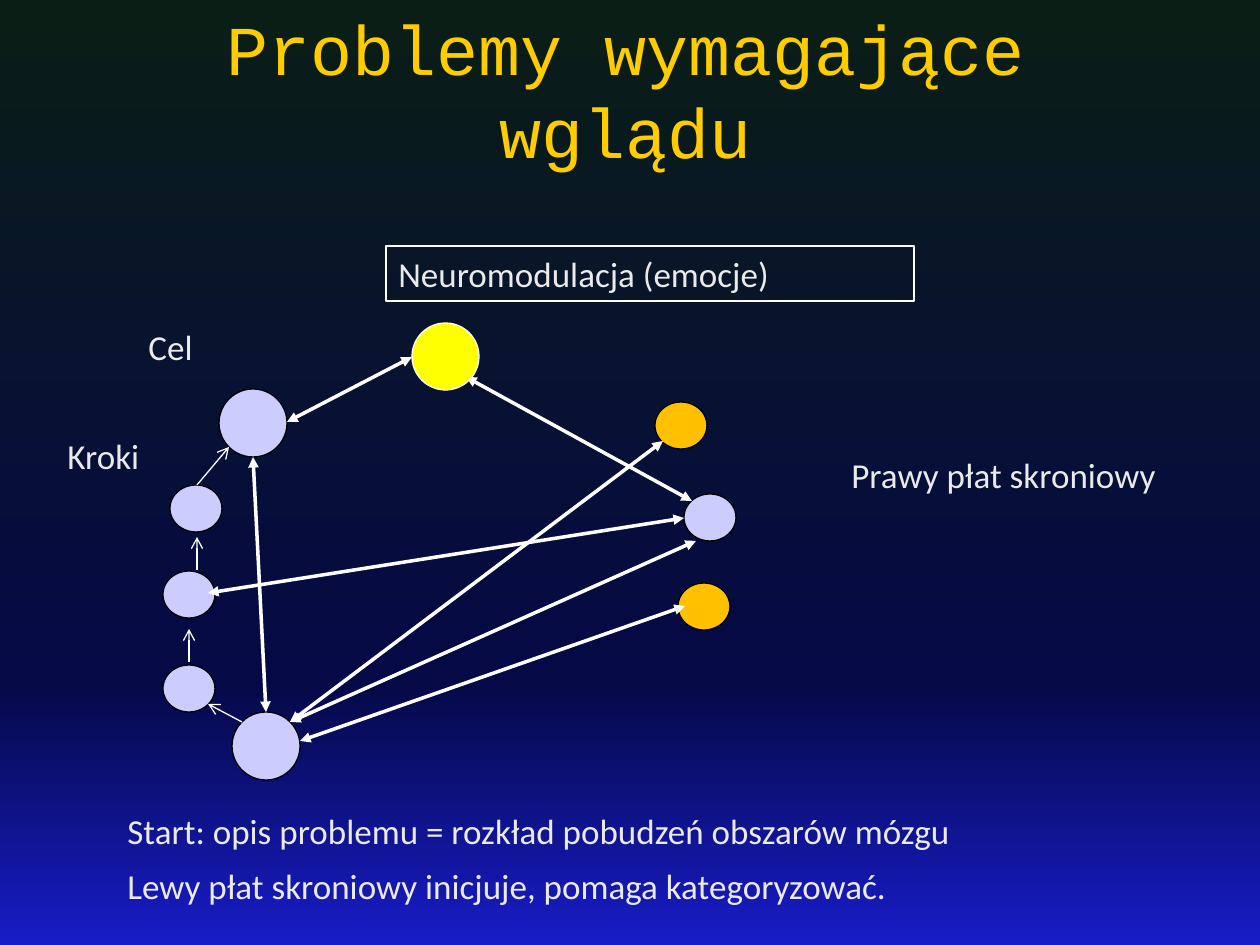
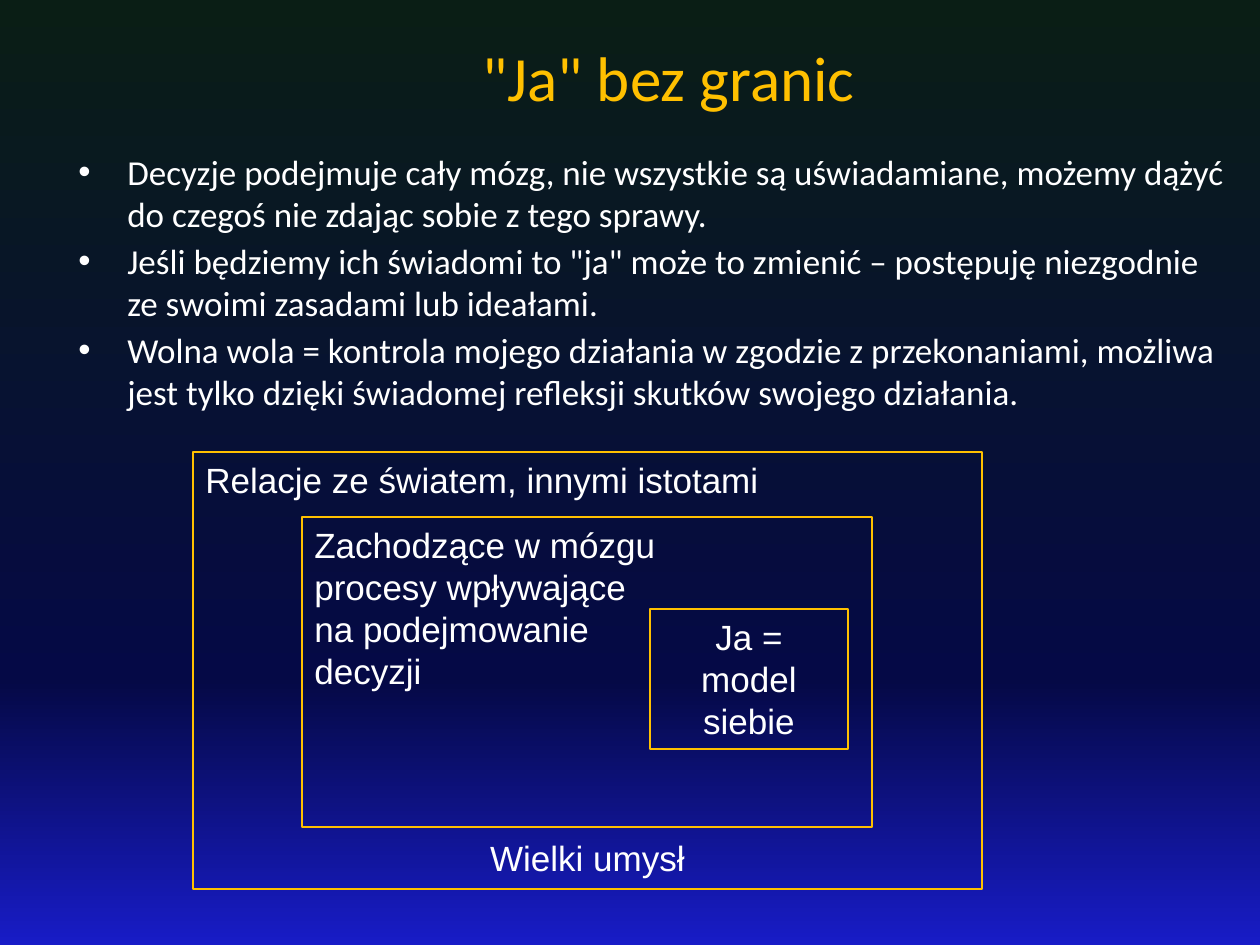
from lxml.etree import SubElement
from copy import deepcopy
from pptx import Presentation
from pptx.dml.color import RGBColor
from pptx.enum.shapes import MSO_CONNECTOR, MSO_SHAPE
from pptx.enum.text import MSO_ANCHOR, MSO_AUTO_SIZE, PP_ALIGN
from pptx.oxml import parse_xml
from pptx.oxml.ns import nsdecls, qn
from pptx.util import Emu, Pt

PX = 914400 / 126
COLORS = {
    "top": "0A1E15", "middle": "050946", "bottom": "181CC7",
    "gold": "FFCC00", "amber": "FFC000", "yellow": "FFFF00",
    "lavender": "CCCCFF", "pale": "EAEAEA", "white": "FFFFFF", "black": "000000",
}
BACKGROUND_STOPS = [(0, "top"), (0.72, "middle"), (1, "bottom")]

# Slide 1: insight problems
INSIGHT_TITLE = "Problemy wymagające wglądu"
BIG, SMALL, HUB = (68, 68), (52, 47), (67, 67)
NODES = [
    ((232, 712), BIG, "lavender"),
    ((163, 665), SMALL, "lavender"),
    ((219, 389), BIG, "lavender"),
    ((163, 571), SMALL, "lavender"),
    ((170, 485), SMALL, "lavender"),
    ((678, 583), SMALL, "amber"),
    ((684, 494), SMALL, "lavender"),
    ((655, 402), SMALL, "amber"),
]
LINKS = [
    ((300, 741), (685, 606)),
    ((290, 722), (696, 541)),
    ((290, 722), (663, 441)),
    ((208, 593), (684, 518)),
    ((253, 457), (266, 712)),
    ((466, 377), (692, 501)),
    ((287, 422), (412, 357)),
]
STEPS = [
    ((242, 722), (208, 704)),
    ((189, 662), (189, 629)),
    ((197, 570), (197, 537)),
    ((197, 485), (229, 447)),
]
LABELS = [
    ("Prawy płat skroniowy", (839, 447, 348, 55)),
    ("Lewy płat skroniowy inicjuje, pomaga kategoryzować.", (115, 858, 892, 55)),
    ("Start: opis problemu = rozkład pobudzeń obszarów mózgu", (115, 803, 1041, 55)),
    ("Cel", (136, 319, 120, 55)),
    ("Kroki", (55, 428, 120, 55)),
]
NEUROMODULATION = "Neuromodulacja (emocje)"

# Slide 2: the self without borders
SELF_TITLE = '"Ja" bez granic'
POINTS = [
    "Decyzje podejmuje cały mózg, nie wszystkie są uświadamiane, "
    "możemy dążyć do czegoś nie zdając sobie z tego sprawy.",
    'Jeśli będziemy ich świadomi to "ja" może to zmienić – '
    "postępuję niezgodnie ze swoimi zasadami lub ideałami.",
    "Wolna wola = kontrola mojego działania w zgodzie z przekonaniami, "
    "możliwa jest tylko dzięki świadomej refleksji skutków swojego działania.",
]
SELF_MODEL = ["Ja =\nmodel siebie"]
BRAIN = ["Zachodzące w mózgu\nprocesy wpływające\nna podejmowanie\ndecyzji"]
WORLD = ["Relacje ze światem, innymi istotami", "Wielki umysł"]


def px(*lengths):
    return [Emu(round(length * PX)) for length in lengths]


def rgb(name):
    return RGBColor.from_string(COLORS[name])


def write_text(shape, paragraphs, *, size=20, font="Calibri", color="pale",
               align=PP_ALIGN.LEFT, anchor=MSO_ANCHOR.TOP, leading=None,
               after=0, bullet_indent=0):
    frame = shape.text_frame
    frame.word_wrap = True
    frame.auto_size = MSO_AUTO_SIZE.NONE
    frame.vertical_anchor = anchor
    for index, text in enumerate(paragraphs):
        paragraph = frame.add_paragraph() if index else frame.paragraphs[0]
        paragraph.text = text
        paragraph.alignment = align
        paragraph.space_before = Pt(0)
        paragraph.space_after = Pt(after)
        if leading:
            paragraph.line_spacing = Pt(leading)
        if bullet_indent:
            indent = px(bullet_indent)[0]
            properties = paragraph._p.get_or_add_pPr()
            properties.set("marL", str(indent))
            properties.set("indent", str(-indent))
            SubElement(properties, qn("a:buFont"), typeface="Arial")
            SubElement(properties, qn("a:buChar"), char="•")
        for run in paragraph.runs:
            run.font.size = Pt(size)
            run.font.name = font
            run.font.color.rgb = rgb(color)
    return frame


def add_figure(slide, kind, box, *, fill=None, line="black", width=0.75):
    shape = slide.shapes.add_shape(kind, *px(*box))
    shape.shadow.inherit = False
    if fill:
        shape.fill.solid()
        shape.fill.fore_color.rgb = rgb(fill)
    else:
        shape.fill.background()
    shape.line.color.rgb = rgb(line)
    shape.line.width = Pt(width)
    return shape


def add_arrow(slide, start, end, *, width, ends):
    connector = slide.shapes.add_connector(MSO_CONNECTOR.STRAIGHT, *px(*start, *end))
    connector.line.color.rgb = rgb("white")
    connector.line.width = Pt(width)
    for tag, kind in ends.items():
        SubElement(connector.line._get_or_add_ln(), qn(f"a:{tag}"), type=kind)
    SubElement(connector._element.spPr, qn("a:effectLst"))


def add_text_box(slide, paragraphs, box, **style):
    return write_text(slide.shapes.add_textbox(*px(*box)), paragraphs, **style)


def add_titled_slide(presentation, text, box, **style):
    slide = presentation.slides.add_slide(presentation.slide_layouts[5])
    title = slide.shapes.title
    title.left, title.top, title.width, title.height = px(*box)
    write_text(title, [text], align=PP_ALIGN.CENTER, anchor=MSO_ANCHOR.MIDDLE, **style)
    return slide


def set_background(master):
    fill = master.background.fill
    fill.gradient()
    fill.gradient_angle = 270
    stop_list = master.element.find(f".//{qn('p:bg')}//{qn('a:gsLst')}")
    while len(stop_list) < len(BACKGROUND_STOPS):
        stop_list.append(deepcopy(stop_list[0]))
    for stop, (position, color) in zip(fill.gradient_stops, BACKGROUND_STOPS):
        stop.position = position
        stop.color.rgb = rgb(color)


def add_text_shadow(run):
    fill = run._r.rPr.find(qn("a:solidFill"))
    fill.addnext(parse_xml(
        f'<a:effectLst {nsdecls("a")}><a:outerShdw dist="38100" dir="2700000">'
        '<a:srgbClr val="808080"/></a:outerShdw></a:effectLst>'))


def build_insight_slide(presentation):
    slide = add_titled_slide(presentation, INSIGHT_TITLE, (134, 43, 983, 92),
                             size=40, font="Courier New", color="gold")
    # Network of brain areas
    for corner, size, color in NODES:
        add_figure(slide, MSO_SHAPE.OVAL, corner + size, fill=color)
    for start, end in LINKS:
        add_arrow(slide, start, end, width=2,
                  ends={"headEnd": "triangle", "tailEnd": "triangle"})
    for start, end in STEPS:
        add_arrow(slide, start, end, width=0.75, ends={"tailEnd": "arrow"})
    add_figure(slide, MSO_SHAPE.OVAL, (412, 323) + HUB, fill="yellow", line="white")
    # Labels
    for text, box in LABELS:
        add_text_box(slide, [text], box)
    frame = add_figure(slide, MSO_SHAPE.RECTANGLE, (386, 246, 528, 55), line="white")
    write_text(frame, [NEUROMODULATION])


def build_self_slide(presentation):
    slide = add_titled_slide(presentation, SELF_TITLE, (192, 21, 953, 110),
                             size=36, color="amber")
    add_text_shadow(slide.shapes.title.text_frame.paragraphs[0].runs[0])
    add_text_box(slide, POINTS, (66, 144, 1174, 302), color="white",
                 after=3, bullet_indent=49)
    # Nested frames, from the outside in
    nested = [
        (WORLD, (193, 452, 789, 437), 1.5, PP_ALIGN.LEFT),
        (BRAIN, (302, 517, 570, 310), 1.5, PP_ALIGN.LEFT),
        (SELF_MODEL, (650, 609, 198, 140), 0.75, PP_ALIGN.CENTER),
    ]
    frames = []
    for paragraphs, box, width, align in nested:
        shape = add_figure(slide, MSO_SHAPE.RECTANGLE, box, line="amber", width=width)
        frames.append(write_text(shape, paragraphs, font="Arial", color="white",
                                 align=align, leading=24))
    great_mind = frames[0].paragraphs[1]
    great_mind.alignment = PP_ALIGN.CENTER
    great_mind.space_before = Pt(192)


def main():
    presentation = Presentation()
    presentation.slide_width, presentation.slide_height = px(1260, 945)
    set_background(presentation.slide_master)
    build_insight_slide(presentation)
    build_self_slide(presentation)
    presentation.save("out.pptx")


if __name__ == "__main__":
    main()
